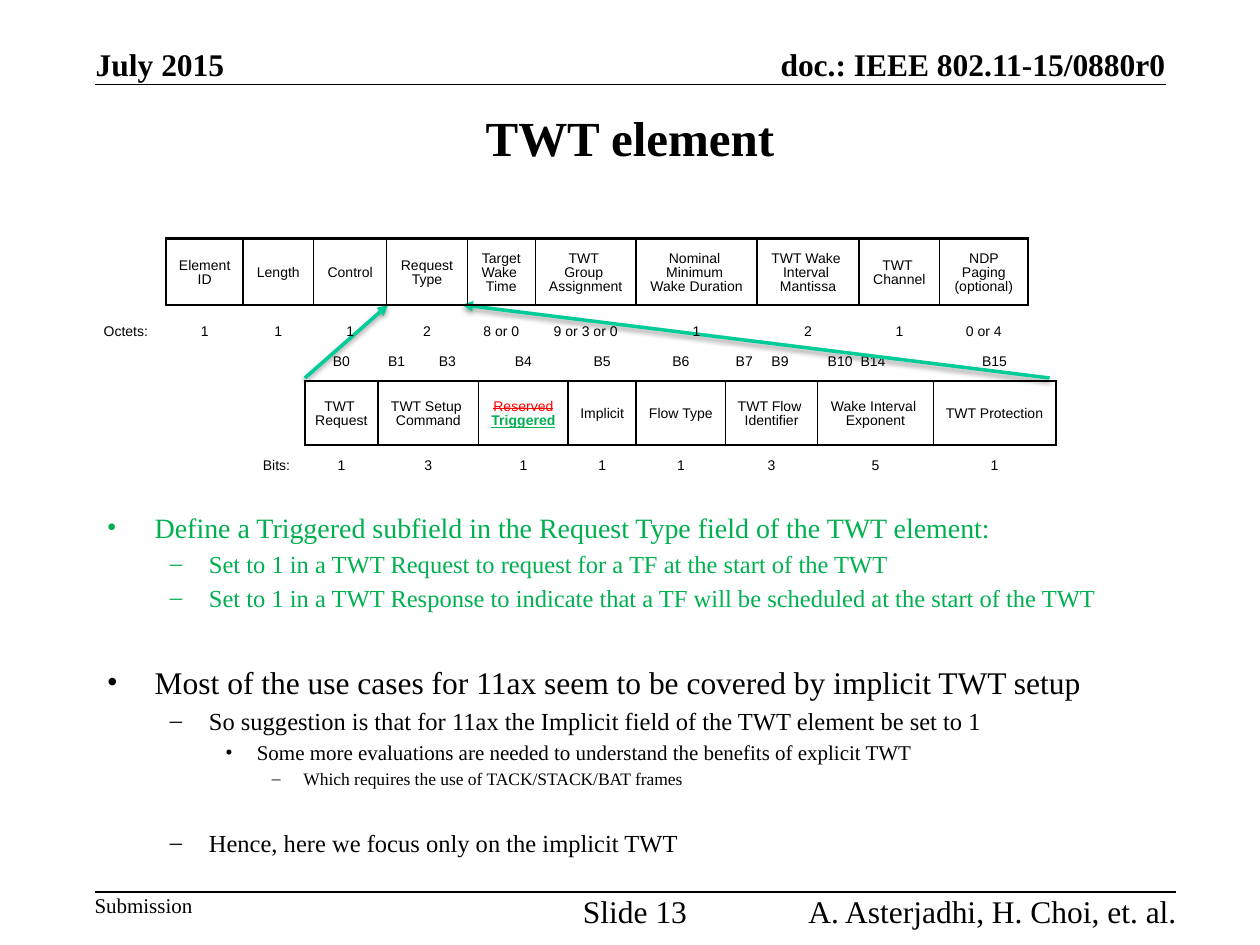
from lxml import etree
from pptx import Presentation
from pptx import util as u
from pptx.dml.color import RGBColor
from pptx.enum import shapes, text
from pptx.oxml import ns

COLORS = {"black": "000000", "green": "00B050", "red": "FF0000", "teal": "00CC99"}
ALIGN = {"l": text.PP_ALIGN.LEFT, "c": text.PP_ALIGN.CENTER, "r": text.PP_ALIGN.RIGHT}
SERIF, SANS = "Times New Roman", "Arial"
NO_STYLE = "{2D5ABB26-0587-4C30-8999-92F81FD0307C}"
THICK, THIN = 1.5, 1

REQUEST_COLS = [0.42, 0.58, 0.8, 0.71, 0.54, 0.71, 0.73, 0.92, 0.97]
REQUEST_ROWS = [
    ["", "B0", "B1\tB3", "B4", "B5", "B6", "B7\tB9", "B10\tB14", "B15"],
    ["", "TWT \nRequest", "TWT Setup \nCommand", "Reserved\nTriggered", "Implicit",
     "Flow Type", "TWT Flow \nIdentifier", "Wake Interval \nExponent", "TWT Protection"],
    ["Bits: ", "1", "3", "1", "1", "1", "3", "5", "1"],
]
REQUEST_TABS = {2: 0.54, 6: 0.42, 7: 0.46}
ELEMENT_COLS = [0.61, 0.61, 0.56, 0.58, 0.64, 0.54, 0.8, 0.96, 0.81, 0.64, 0.7]
ELEMENT_ROWS = [
    [""] * 11,
    ["", "Element \nID", "Length", "Control", "Request\nType", "Target\nWake \nTime",
     "TWT \nGroup \nAssignment", "Nominal \nMinimum \nWake Duration",
     "TWT Wake \nInterval \nMantissa", "TWT \nChannel", "NDP Paging\n(optional)"],
    ["Octets: ", "1", "1", "1", "2", "8 or 0", "9 or 3 or 0", "1", "2", "1", "0 or 4"],
]
MARKED = {
    "Reserved": {"color": "red", "strike": True},
    "Triggered": {"color": "green", "bold": True, "underline": True},
}
LEVELS = [(0.38, 0.38, "•"), (0.81, 0.31, "–"), (1.19, 0.25, "•"), (1.56, 0.25, "–")]
BULLETS = [
    (0, 16, "green", 3.2, "Define a Triggered subfield in the Request Type field of the TWT element:"),
    (1, 14, "green", 2.8, "Set to 1 in a TWT Request to request for a TF at the start of the TWT"),
    (1, 14, "green", 2.8, "Set to 1 in a TWT Response to indicate that a TF will be scheduled at the start of the TWT"),
    (0, 18, "black", 29, "Most of the use cases for 11ax seem to be covered by implicit TWT setup"),
    (1, 14, "black", 2.8, "So suggestion is that for 11ax the Implicit field of the TWT element be set to 1"),
    (2, 12, "black", 2.4, "Some more evaluations are needed to understand the benefits of explicit TWT"),
    (3, 10, "black", 2, "Which requires the use of TACK/STACK/BAT frames"),
    (1, 14, "black", 22, "Hence, here we focus only on the implicit TWT"),
]


def add_xml(parent, tag, **attrs):
    return etree.SubElement(parent, ns.qn(tag), {k: str(v) for k, v in attrs.items()})


def write(p, words, size=18, font=SERIF, color="black", bold=False, underline=False,
          strike=False, align="l", before=0, spacing=None):
    p.alignment = ALIGN[align]
    p.line_spacing = u.Pt(spacing) if spacing else None
    p.space_before = u.Pt(before)
    r = p.add_run()
    r.text = words
    r.font.size, r.font.name = u.Pt(size), font
    r.font.bold, r.font.underline = bold, underline
    r.font.color.rgb = RGBColor.from_string(COLORS[color])
    if strike:
        r.font._element.set("strike", "sngStrike")


def next_paragraph(tf, i):
    return tf.add_paragraph() if i else tf.paragraphs[0]


def add_label(s, words, box, anchor=text.MSO_ANCHOR.TOP, **fmt):
    tf = s.shapes.add_textbox(*map(u.Inches, box)).text_frame
    tf.margin_left = tf.margin_right = tf.margin_top = tf.margin_bottom = 0
    tf.word_wrap = False
    tf.auto_size = text.MSO_AUTO_SIZE.SHAPE_TO_FIT_TEXT
    tf.vertical_anchor = anchor
    write(tf.paragraphs[0], words, **fmt)


def add_line(s, start, end, color="black", width=1, arrow=False):
    c = s.shapes.add_connector(shapes.MSO_CONNECTOR.STRAIGHT, *map(u.Inches, start + end))
    c.line.color.rgb = RGBColor.from_string(COLORS[color])
    c.line.width = u.Pt(width)
    if arrow:
        add_xml(c.line._get_or_add_ln(), "a:tailEnd", type="triangle")
    effects = add_xml(c._element.spPr, "a:effectLst")
    if arrow:
        shadow = add_xml(effects, "a:outerShdw", blurRad=u.Pt(3.1), dist=u.Pt(1.6),
                         dir=5400000, rotWithShape=0)
        tint = add_xml(shadow, "a:srgbClr", val=COLORS["black"])
        add_xml(tint, "a:alpha", val=38000)


def set_borders(cell, **widths):
    tc_pr = cell._tc.get_or_add_tcPr()
    for side in "LRTB":
        width = widths.get(side, 0)
        ln = add_xml(tc_pr, f"a:ln{side}", w=u.Pt(width))
        if width:
            add_xml(add_xml(ln, "a:solidFill"), "a:srgbClr", val=COLORS["black"])
        else:
            add_xml(ln, "a:noFill")
    cell.fill.background()


def cell_borders(row, col, last, right):
    if col == 0:
        return {"R": THICK} if row == 1 else {}
    if row == 1:
        return {"L": THICK if col == 1 else THIN, "R": right if col == last else THIN,
                "T": THICK, "B": THICK}
    return {"B": THICK} if row == 0 else {"T": THICK}


def fill_cell(cell, words, side, tab):
    cell.margin_left = cell.margin_right = u.Inches(side)
    cell.margin_top, cell.margin_bottom = u.Inches(0.11), u.Inches(0.08)
    cell.vertical_anchor = text.MSO_ANCHOR.MIDDLE
    tf = cell.text_frame
    if not words:
        add_xml(tf.paragraphs[0]._p, "a:endParaRPr", sz=800)
        return
    for i, line in enumerate(words.split("\n")):
        p = next_paragraph(tf, i)
        write(p, line, size=8, font=SANS, spacing=8, align="l" if tab else "c",
              **MARKED.get(line, {}))
        if tab:
            tabs = add_xml(p._p.get_or_add_pPr(), "a:tabLst")
            add_xml(tabs, "a:tab", pos=u.Inches(tab), algn="r")


def add_field_table(s, left, top, cols, heights, rows, side, right, tabs):
    frame = s.shapes.add_table(len(rows), len(cols), u.Inches(left), u.Inches(top),
                               u.Inches(sum(cols)), u.Inches(sum(heights)))
    table = frame.table
    table.first_row = table.horz_banding = False
    table._tbl.tblPr.find(ns.qn("a:tableStyleId")).text = NO_STYLE
    for column, width in zip(table.columns, cols):
        column.width = u.Inches(width)
    for row, height in zip(table.rows, heights):
        row.height = u.Inches(height)
    for i, row in enumerate(rows):
        for j, words in enumerate(row):
            cell = table.cell(i, j)
            fill_cell(cell, words, side, tabs.get(j) if i == 0 else None)
            set_borders(cell, **cell_borders(i, j, len(cols) - 1, right))


def add_bullets(s):
    tf = s.shapes.add_textbox(*map(u.Inches, (0.75, 4, 8.5, 2.67))).text_frame
    tf.word_wrap = True
    for i, (level, size, color, before, words) in enumerate(BULLETS):
        p = next_paragraph(tf, i)
        p.level = level
        write(p, words, size=size, color=color, before=before)
        margin, hang, mark = LEVELS[level]
        p_pr = p._p.get_or_add_pPr()
        p_pr.set("marL", str(u.Inches(margin)))
        p_pr.set("indent", str(-u.Inches(hang)))
        add_xml(p_pr, "a:buFont", typeface=SERIF)
        add_xml(p_pr, "a:buChar", char=mark)


def add_title(s, words):
    sp = s.shapes.title
    sp.left, sp.top, sp.width, sp.height = map(u.Inches, (0.75, 0.75, 8.5, 0.67))
    sp.text_frame.vertical_anchor = text.MSO_ANCHOR.MIDDLE
    write(sp.text_frame.paragraphs[0], words, size=28, bold=True, align="c")


def main():
    prs = Presentation()
    prs.slide_width, prs.slide_height = u.Inches(10), u.Inches(7.5)
    s = prs.slides.add_slide(prs.slide_layouts[5])
    bottom = text.MSO_ANCHOR.BOTTOM
    add_label(s, "doc.: IEEE 802.11-15/0880r0", (5.66, 0.36, 3.59, 0.3), bottom, bold=True, align="r")
    add_line(s, (0.75, 0.67), (9.25, 0.67))
    add_label(s, "Submission", (0.75, 7.08, 0.78, 0.2), size=12)
    add_line(s, (0.75, 7.08), (9.33, 7.08))
    add_title(s, "TWT element")
    add_bullets(s)
    add_label(s, "July 2015", (0.76, 0.36, 1.03, 0.3), bottom, bold=True)
    add_label(s, "Slide 13", (4.54, 7.08, 1, 0.3), align="c")
    add_field_table(s, 2, 2.7, REQUEST_COLS, [0.3, 0.51, 0.31], REQUEST_ROWS,
                    0.08, THICK, REQUEST_TABS)
    add_line(s, (2.42, 3), (3.08, 2.42), "teal", 2, arrow=True)
    add_line(s, (8.33, 3), (3.67, 2.42), "teal", 2, arrow=True)
    add_field_table(s, 0.71, 1.57, ELEMENT_COLS, [0.31, 0.53, 0.4], ELEMENT_ROWS,
                    0.09, THIN, {})
    add_label(s, "A. Asterjadhi, H. Choi, et. al.", (6.24, 7.08, 3.1, 0.3), align="r")
    prs.save("out.pptx")


if __name__ == "__main__":
    main()
